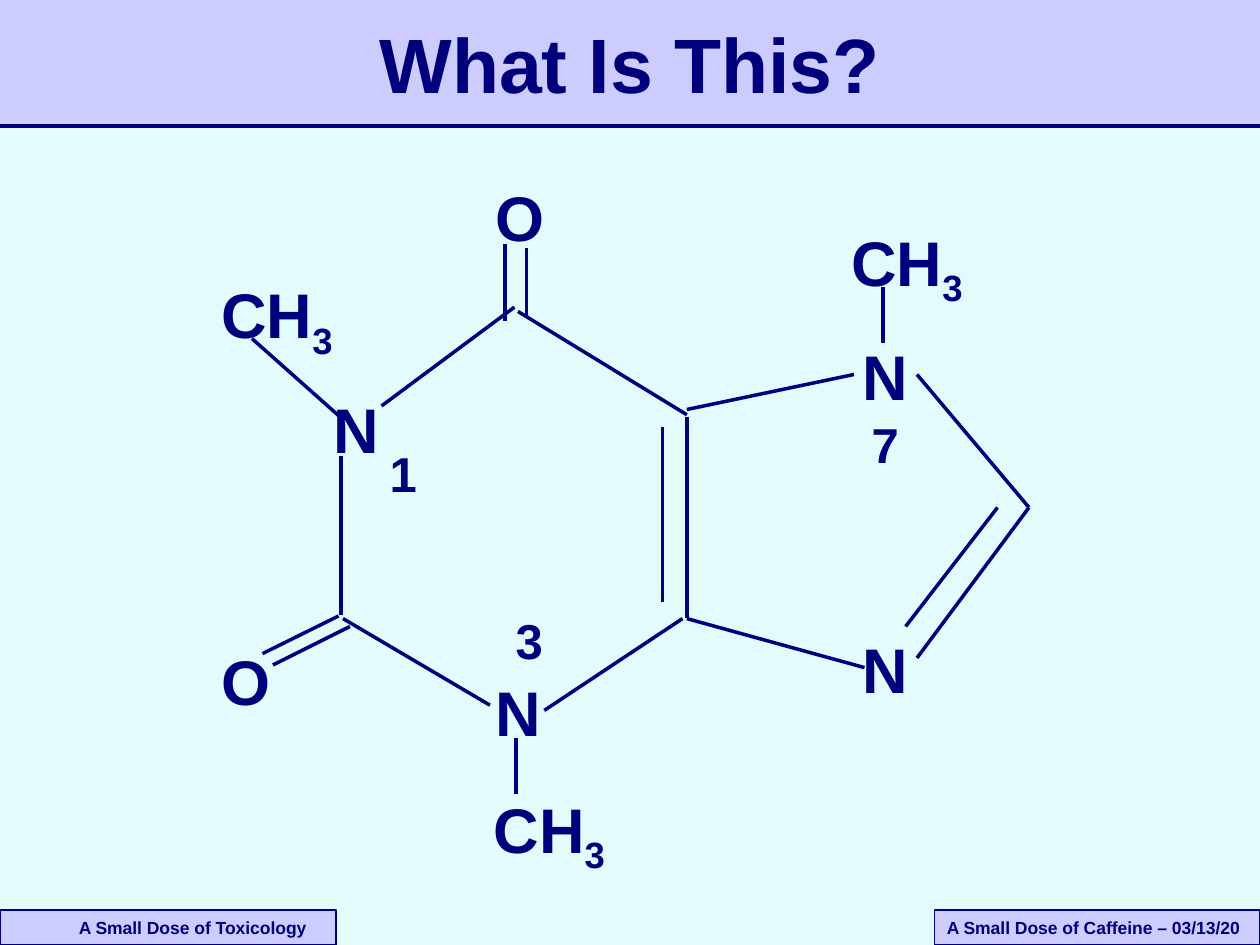
from pptx import Presentation
from pptx.util import Pt
from pptx.dml.color import RGBColor
from pptx.enum.shapes import MSO_CONNECTOR, MSO_SHAPE
from pptx.enum.text import MSO_ANCHOR, PP_ALIGN
from lxml.etree import SubElement
from pptx.oxml.ns import qn

COLORS = {"ink": "00007D", "band": "CCCCFF", "back": "E2FCFE"}
ink, band, back = (RGBColor.from_string(c) for c in COLORS.values())


def style(run, size):
    run.font.name = "Arial"
    run.font.size = Pt(size)
    run.font.bold = True
    run.font.color.rgb = ink


def draw(x1, y1, x2, y2):
    line = shapes.add_connector(
        MSO_CONNECTOR.STRAIGHT, Pt(x1), Pt(y1), Pt(x2), Pt(y2))
    line.line.color.rgb = ink
    line.line.width = Pt(2)
    SubElement(line._element.spPr, qn("a:effectLst"))


deck = Presentation()
deck.slide_width, deck.slide_height = Pt(720), Pt(540)
slide = deck.slides.add_slide(deck.slide_layouts[5])
shapes = slide.shapes
slide.background.fill.solid()
slide.background.fill.fore_color.rgb = back

bars = [
    (0, 0, 720, 72, "", 0),
    (0, 520, 192, 20, "A Small Dose of Toxicology", 45),
    (534, 520, 186, 20, "A Small Dose of Caffeine – 03/13/20", 7.2),
]
for x, y, wide, high, words, inset in bars:
    bar = shapes.add_shape(MSO_SHAPE.RECTANGLE, Pt(x), Pt(y), Pt(wide), Pt(high))
    bar.shadow.inherit = False
    bar.fill.solid()
    bar.fill.fore_color.rgb = band
    if not words:
        bar.line.fill.background()
        continue
    bar.line.color.rgb = ink
    bar.line.width = Pt(0.75)
    frame = bar.text_frame
    frame.word_wrap = False
    frame.margin_left = Pt(inset)
    frame.vertical_anchor = MSO_ANCHOR.MIDDLE
    frame.text = words
    frame.paragraphs[0].alignment = PP_ALIGN.LEFT
    style(frame.paragraphs[0].runs[0], 10)
draw(0, 72, 720, 72)

title = shapes.title
title.left, title.top, title.width, title.height = Pt(54), Pt(6), Pt(612), Pt(60)
title.text_frame.text = "What Is This?"
title.text_frame.vertical_anchor = MSO_ANCHOR.MIDDLE
title.text_frame.paragraphs[0].alignment = PP_ALIGN.CENTER
style(title.text_frame.paragraphs[0].runs[0], 44)
shapes._spTree.append(title._element)

bonds = [
    (494, 381.5, 392.5, 353.5),
    (218, 232, 294, 175.5),
    (296, 178, 392.5, 237),
    (392.5, 238.5, 392.5, 353),
    (195, 260.5, 195, 351.5),
    (196, 353.5, 280, 403),
    (311, 406, 390, 353.5),
    (488, 214, 392.5, 234),
    (524, 214, 588, 290),
    (524, 376, 588, 290),
    (517.5, 358, 570, 290),
    (504.5, 196, 504.5, 164),
    (295, 453.5, 295, 422),
    (193.5, 237.5, 144, 193.5),
    (193.5, 352, 150, 373.5),
    (200, 358, 156, 380),
    (301, 142, 301, 182),
    (288.5, 183.5, 288.5, 139.5),
    (378.5, 244, 378.5, 344),
]
for bond in bonds:
    draw(*bond)

atoms = [
    ("N", 183.5, 219.5), ("N", 276, 381.5), ("N", 486, 357), ("N", 486, 189.5),
    ("CH3", 479.5, 124), ("CH3", 275, 448), ("CH3", 119.5, 154),
    ("O", 119.5, 363.5), ("O", 276, 98.5),
    ("1", 215.5, 250), ("3", 287.5, 345.5), ("7", 491, 233.5),
]
widths = {"N": 40.5, "CH3": 80, "O": 42.5}
for name, x, y in atoms:
    size, high = (28, 40.5) if name.isdigit() else (36, 50.5)
    box = shapes.add_textbox(Pt(x), Pt(y), Pt(widths.get(name, 29.5)), Pt(high))
    frame = box.text_frame
    frame.word_wrap = False
    line = frame.paragraphs[0]
    line.text = name[:2]
    if name[2:]:
        sub = line.add_run()
        sub.text = name[2:]
        sub._r.get_or_add_rPr().set("baseline", "-25000")
    for run in line.runs:
        style(run, size)

deck.save("out.pptx")
